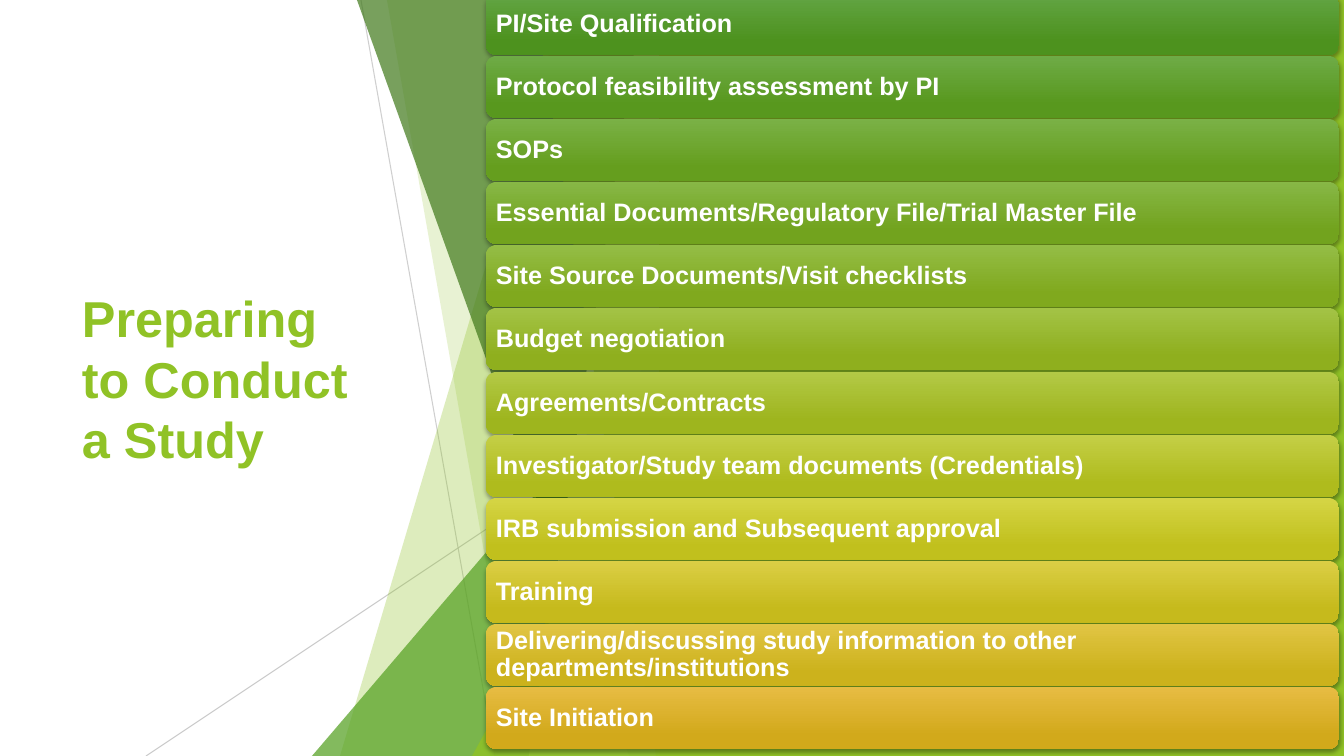
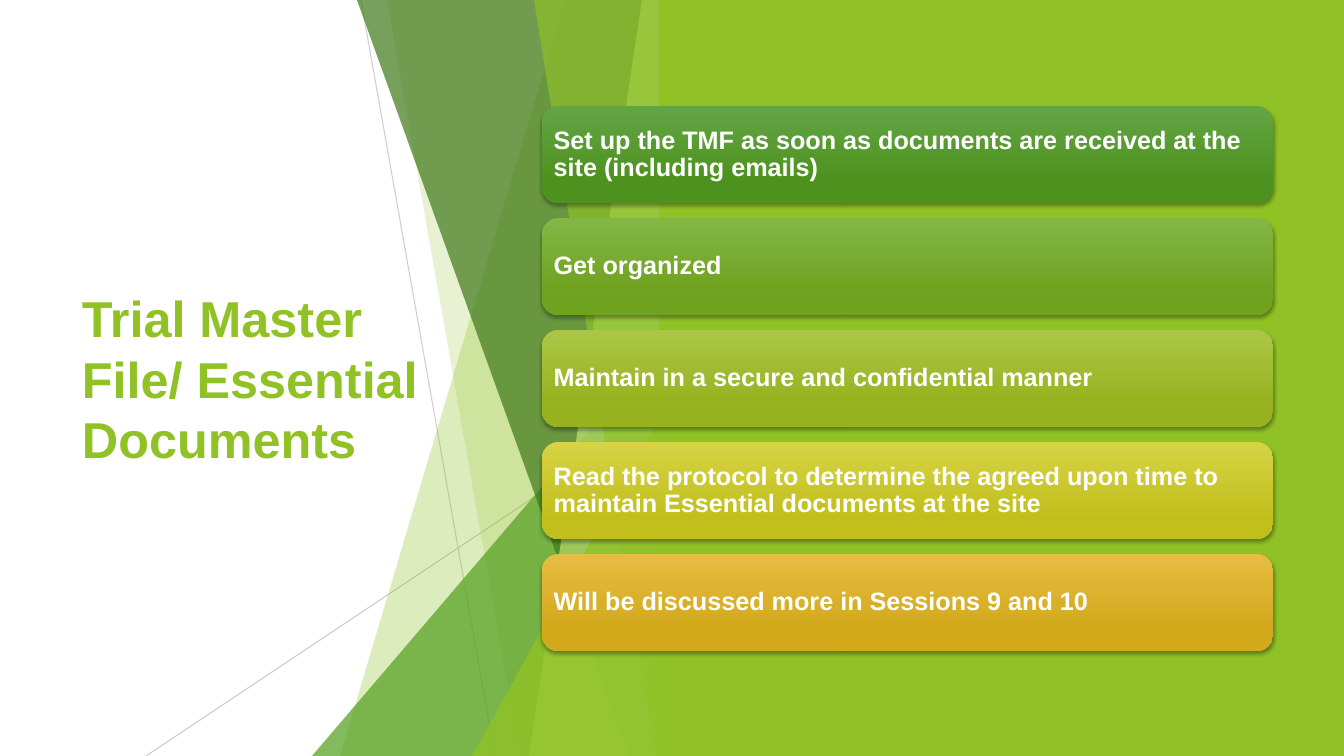
from colorsys import hsv_to_rgb, rgb_to_hsv

from pptx import Presentation
from pptx.dml.color import RGBColor
from pptx.enum.shapes import MSO_CONNECTOR as Connector, MSO_SHAPE as Shape
from pptx.enum.text import MSO_ANCHOR as Anchor, PP_ALIGN as Align
from pptx.oxml.ns import qn
from pptx.oxml.xmlchemy import OxmlElement
from pptx.util import Emu, Pt

WIDTH, HEIGHT = 1344, 756
PX = 12192000 / WIDTH

WHITE = RGBColor(0xFF, 0xFF, 0xFF)
BLACK = RGBColor(0x00, 0x00, 0x00)
GREY = RGBColor(0xBF, 0xBF, 0xBF)
LIME = RGBColor(0x90, 0xC2, 0x26)
PALE_LIME = RGBColor(0xC0, 0xE4, 0x74)
GREEN = RGBColor(0x54, 0xA0, 0x21)
DARK_GREEN = RGBColor(0x3F, 0x78, 0x19)

# First and last bar colour, for the upper and the lower end of the gradient
BAR_UPPER = RGBColor(0x63, 0xA5, 0x45), RGBColor(0xE7, 0xBC, 0x43)
BAR_LOWER = RGBColor(0x4D, 0x92, 0x1E), RGBColor(0xD2, 0xA9, 0x1B)

FONT = "Arial"
TITLE_SIZE, BAR_SIZE = Pt(36), Pt(18)
FACET_EDGE = 671
PANEL_LEFT = 659
TITLE_INSET, BAR_INSET = 10, 7

PREPARING_STEPS = [
    "PI/Site Qualification",
    "Protocol feasibility assessment by PI",
    "SOPs",
    "Essential Documents/Regulatory File/Trial Master File",
    "Site Source Documents/Visit checklists",
    "Budget negotiation",
    "Agreements/Contracts",
    "Investigator/Study team documents (Credentials)",
    "IRB submission and Subsequent approval",
    "Training",
    "Delivering/discussing study information to other departments/institutions",
    "Site Initiation",
]
MASTER_FILE_RULES = [
    "Set up the TMF as soon as documents are received at the site (including emails)",
    "Get organized",
    "Maintain in a secure and confidential manner",
    "Read the protocol to determine the agreed upon time to maintain Essential documents at the site",
    "Will be discussed more in Sessions 9 and 10",
]


def px(*lengths):
    return [Emu(round(length * PX)) for length in lengths]


def blend(ends, share):
    """Colour at a share of the way between two colours, by hue."""
    first, last = (rgb_to_hsv(*(channel / 255 for channel in end)) for end in ends)
    mixed = hsv_to_rgb(*(a + (b - a) * share for a, b in zip(first, last)))
    return RGBColor(*(round(channel * 255) for channel in mixed))


def set_opacity(element, percent):
    for colour in element.iter(qn("a:srgbClr")):
        alpha = OxmlElement("a:alpha")
        alpha.set("val", str(percent * 1000))
        colour.append(alpha)


def add_soft_shadow(shape):
    shape.shadow.inherit = False
    shadow = OxmlElement("a:outerShdw")
    settings = {"blurRad": Pt(3), "dist": Pt(2), "dir": 90 * 60000, "rotWithShape": 0}
    for name, value in settings.items():
        shadow.set(name, str(int(value)))
    colour = OxmlElement("a:srgbClr")
    colour.set("val", str(BLACK))
    shadow.append(colour)
    set_opacity(shadow, 35)
    shape._element.spPr.find(qn("a:effectLst")).append(shadow)


class Deck:
    def __init__(self):
        self.presentation = Presentation()
        size = px(WIDTH, HEIGHT)
        self.presentation.slide_width, self.presentation.slide_height = size
        self.slide = None

    def add_slide(self, title, title_width):
        layout = self.presentation.slide_layouts[6]
        self.slide = self.presentation.slides.add_slide(layout)
        self.title(title, title_width)
        self.backdrop()

    def label(self, shape, text, size, colour, inset):
        frame = shape.text_frame
        frame.word_wrap = True
        frame.vertical_anchor = Anchor.MIDDLE
        [margin] = px(inset)
        frame.margin_left = frame.margin_right = margin
        frame.margin_top = frame.margin_bottom = margin
        paragraph = frame.paragraphs[0]
        paragraph.alignment = Align.LEFT
        run = paragraph.add_run()
        run.text = text
        run.font.name, run.font.size, run.font.bold = FONT, size, True
        run.font.color.rgb = colour
        return paragraph

    def title(self, text, width):
        box = self.slide.shapes.add_textbox(*px(72, 152, width, 452))
        self.label(box, text, TITLE_SIZE, LIME, TITLE_INSET)

    def paint(self, shape, colour, opacity=100):
        shape.shadow.inherit = False
        shape.fill.solid()
        shape.fill.fore_color.rgb = colour
        shape.line.fill.background()
        if opacity < 100:
            set_opacity(shape._element.spPr, opacity)

    def hairline(self, start, end, opacity):
        line = self.slide.shapes.add_connector(Connector.STRAIGHT, *px(*start, *end))
        line.line.color.rgb = GREY
        line.line.width = Pt(0.75)
        properties = line._element.spPr
        set_opacity(properties, opacity)
        properties.append(OxmlElement("a:effectLst"))

    def facet(self, top_left, bottom_left, colour, opacity):
        """Full-height facet with a slanted left side."""
        outline = self.slide.shapes.build_freeform(top_left, 0, scale=PX)
        corners = [(FACET_EDGE, 0), (FACET_EDGE, HEIGHT), (bottom_left, HEIGHT)]
        outline.add_line_segments(corners, close=True)
        self.paint(outline.convert_to_shape(), colour, opacity)

    def corner(self, left, top, colour, opacity):
        """Triangle rising to the right, down to the foot of the slide."""
        triangle = self.slide.shapes.add_shape(
            Shape.ISOSCELES_TRIANGLE, *px(left, top, FACET_EDGE - left, HEIGHT - top))
        triangle.adjustments[0] = 1
        self.paint(triangle, colour, opacity)

    def backdrop(self):
        self.hairline((361, 0), (495, HEIGHT), 75)
        self.hairline((FACET_EDGE, 406), (146, HEIGHT), 80)
        self.facet(565, 340, LIME, 30)
        self.facet(387, 520, LIME, 20)
        self.corner(312, 336, GREEN, 72)
        self.facet(357, 629, DARK_GREEN, 70)
        self.facet(642, 529, PALE_LIME, 70)
        self.facet(534, 656, LIME, 65)
        self.corner(472, 396, LIME, 80)
        panel = self.slide.shapes.add_shape(
            Shape.RECTANGLE, *px(PANEL_LEFT, 0, WIDTH - PANEL_LEFT, HEIGHT))
        self.paint(panel, LIME)

    def bar(self, text, box, share):
        bar = self.slide.shapes.add_shape(Shape.ROUNDED_RECTANGLE, *px(*box))
        bar.fill.gradient()
        bar.fill.gradient_angle = 270
        upper, lower = bar.fill.gradient_stops
        upper.position, lower.position = 0, 0.78
        upper.color.rgb = blend(BAR_UPPER, share)
        lower.color.rgb = blend(BAR_LOWER, share)
        bar.line.fill.background()
        add_soft_shadow(bar)
        self.label(bar, text, BAR_SIZE, WHITE, BAR_INSET).line_spacing = 0.9

    def bar_list(self, texts, left, width, height, first_top, last_top):
        """Bars at equal steps, shading from green to amber."""
        for index, text in enumerate(texts):
            share = index / (len(texts) - 1)
            top = round(first_top + (last_top - first_top) * share)
            self.bar(text, (left, top, width, height), share)


def main():
    deck = Deck()
    deck.add_slide("Preparing to Conduct a Study", 288)
    deck.bar_list(PREPARING_STEPS, 486, 853, 62, first_top=-7, last_top=687)
    deck.add_slide("Trial Master File/ Essential Documents", 391)
    deck.bar_list(MASTER_FILE_RULES, 542, 731, 97, first_top=106, last_top=554)
    deck.presentation.save("out.pptx")


if __name__ == "__main__":
    main()
